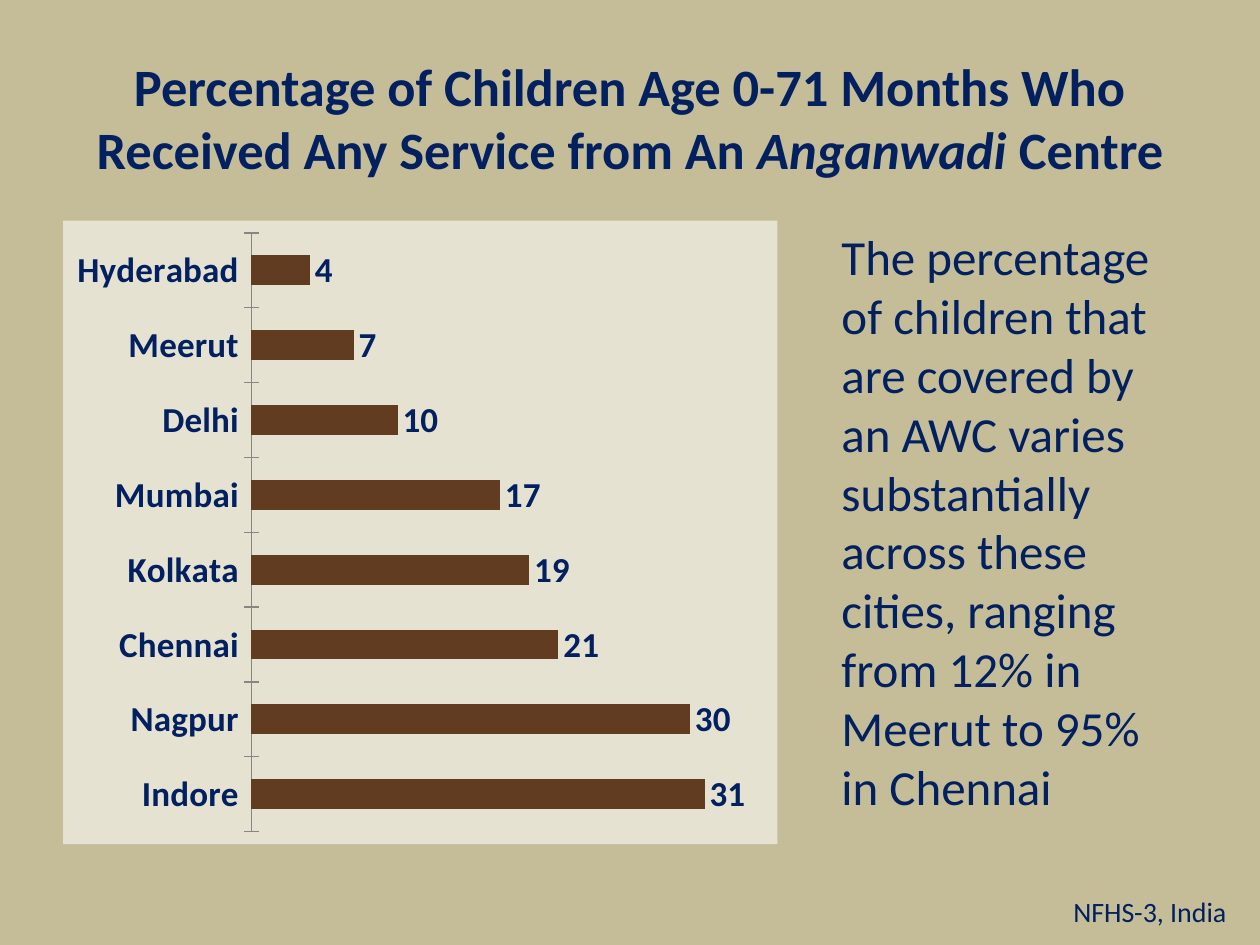
from pptx import Presentation
from pptx.chart.data import CategoryChartData
from pptx.dml.color import RGBColor
from pptx.enum import chart as ch, text as tx
from pptx.oxml import parse_xml
from pptx.util import Inches, Pt

NAVY = RGBColor(0x00, 0x20, 0x60)
BROWN = RGBColor(0x62, 0x3C, 0x20)
SAND = RGBColor(0xC4, 0xBD, 0x97)
CREAM = RGBColor(0xE5, 0xE2, 0xD1)
GRAY = RGBColor(0x86, 0x86, 0x86)
FACE = "Calibri"

# Content: title as (text, italic) runs, bars from bottom to top
TITLE = [
    ("Percentage of Children Age 0-71 Months Who Received Any Service from An ", False),
    ("Anganwadi", True),
    (" Centre", False),
]
RATES = [
    ("Indore", 31), ("Nagpur", 30), ("Chennai", 21), ("Kolkata", 19),
    ("Mumbai", 17), ("Delhi", 10), ("Meerut", 7), ("Hyderabad", 4),
]
NOTE = ("The percentage of children that are covered by an AWC varies "
        "substantially across these cities, ranging from 12% in Meerut "
        "to 95% in Chennai")
SOURCE = "NFHS-3, India"


def style(font, size, bold=False, italic=False):
    font.name, font.size = FACE, Pt(size)
    font.bold, font.italic = bold, italic
    font.color.rgb = NAVY


def write(frame, runs, size, bold=False, align=None):
    frame.word_wrap = True
    para = frame.paragraphs[0]
    para.alignment = align
    for words, italic in runs:
        run = para.add_run()
        run.text = words
        style(run.font, size, bold, italic)


def place(shape, *box):
    shape.left, shape.top, shape.width, shape.height = map(Inches, box)


def add_bars(slide, *box):
    data = CategoryChartData(number_format="0")
    data.categories = [city for city, _ in RATES]
    data.add_series("Series 1", [rate for _, rate in RATES])
    chart = slide.shapes.add_chart(
        ch.XL_CHART_TYPE.BAR_CLUSTERED, *map(Inches, box), data).chart
    chart.has_legend = chart.has_title = False
    style(chart.font, 10)

    # Axes
    cat, val = chart.category_axis, chart.value_axis
    cat.major_tick_mark = ch.XL_TICK_MARK.CROSS
    cat.format.line.color.rgb = GRAY
    style(cat.tick_labels.font, 20, bold=True)
    val.has_major_gridlines = val.visible = False
    val.minimum_scale, val.maximum_scale = 0, 35

    # Bars and labels
    plot = chart.plots[0]
    plot.gap_width, plot.vary_by_categories = 150, False
    fill = plot.series[0].format.fill
    fill.solid()
    fill.fore_color.rgb = BROWN
    plot.has_data_labels = True
    labels = plot.data_labels
    labels.show_value = True
    labels.position = ch.XL_LABEL_POSITION.OUTSIDE_END
    labels.number_format, labels.number_format_is_linked = "0", False
    style(labels.font, 20, bold=True)

    # Chart background goes between the chart and its text properties
    back = parse_xml(
        '<c:spPr xmlns:c="http://schemas.openxmlformats.org/drawingml/2006/chart"'
        ' xmlns:a="http://schemas.openxmlformats.org/drawingml/2006/main">'
        f'<a:solidFill><a:srgbClr val="{CREAM}"/></a:solidFill>'
        '<a:ln><a:noFill/></a:ln></c:spPr>')
    chart.font  # ensures the text properties exist
    chart.element.find("{*}chart").addnext(back)


def main():
    deck = Presentation()
    deck.slide_width, deck.slide_height = Inches(10), Inches(7.5)
    slide = deck.slides.add_slide(deck.slide_layouts[5])
    back = slide.background.fill
    back.solid()
    back.fore_color.rgb = SAND

    # Title
    title = slide.shapes.title
    place(title, 0.5, 0.3, 9, 1.25)
    title.text_frame.vertical_anchor = tx.MSO_ANCHOR.MIDDLE
    write(title.text_frame, TITLE, 30, bold=True, align=tx.PP_ALIGN.CENTER)

    add_bars(slide, 0.5, 1.75, 5.67, 4.95)

    # Comment and source
    for words, size, box in [
        (NOTE, 28, (6.58, 1.75, 2.75, 4.81)),
        (SOURCE, 16, (8.42, 7.05, 1.58, 0.37)),
    ]:
        frame = slide.shapes.add_textbox(*map(Inches, box)).text_frame
        frame.auto_size = tx.MSO_AUTO_SIZE.SHAPE_TO_FIT_TEXT
        write(frame, [(words, False)], size)

    deck.save("out.pptx")


if __name__ == "__main__":
    main()
